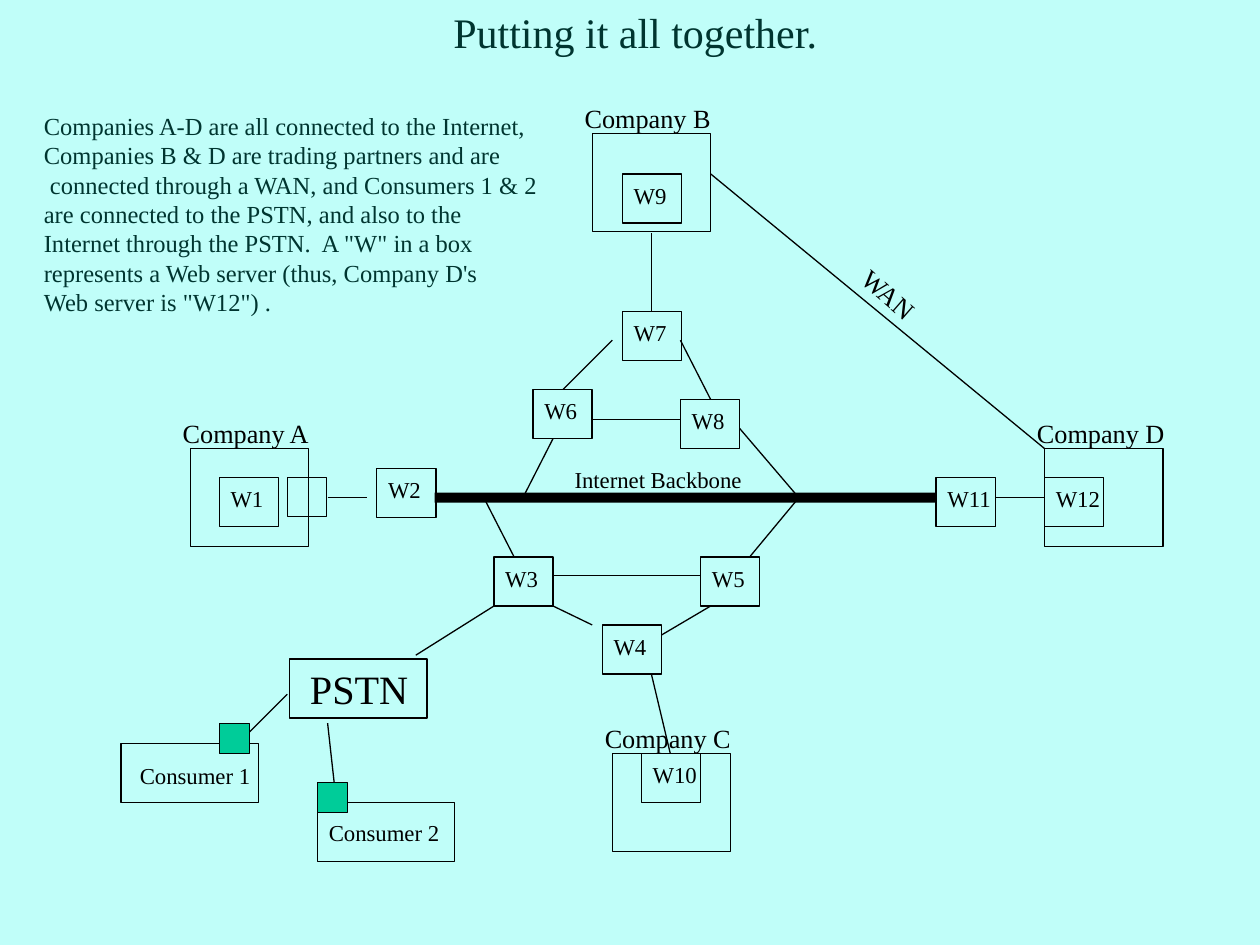
"""Network diagram linking companies, consumers, the PSTN and the Internet."""
from typing import NamedTuple, Optional

from lxml.etree import SubElement
from pptx import Presentation
from pptx.dml.color import RGBColor
from pptx.enum.shapes import MSO_CONNECTOR, MSO_SHAPE
from pptx.enum.text import MSO_AUTO_SIZE
from pptx.oxml.ns import qn
from pptx.shapes.autoshape import Shape
from pptx.slide import Slide
from pptx.util import Cm, Length, Pt

FONT = "Times New Roman"
BLACK, TEAL, GREEN, BACKGROUND = "000000", "003530", "00CC99", "C0FEF9"


class Node(NamedTuple):
    name: str
    left: float
    top: float
    label_width: float


class Link(NamedTuple):
    x1: float
    y1: float
    x2: float
    y2: float


COMPANIES = [
    Node("Company A", 1.51, 3.56, 1.09),
    Node("Company B", 4.7, 1.06, 1.07),
    Node("Company D", 8.29, 3.56, 1.09),
    Node("Company C", 4.86, 5.98, 1.07),
]
SERVERS = [
    Node("W1", 1.74, 3.79, 0.36),
    Node("W9", 4.94, 1.38, 0.36),
    Node("W12", 8.29, 3.79, 0.46),
    Node("W10", 5.09, 5.98, 0.46),
    Node("W2", 2.99, 3.72, 0.36),
    Node("W11", 7.43, 3.79, 0.46),
    Node("W6", 4.23, 3.09, 0.36),
    Node("W7", 4.94, 2.47, 0.36),
    Node("W8", 5.4, 3.17, 0.36),
    Node("W3", 3.92, 4.42, 0.36),
    Node("W4", 4.78, 4.96, 0.36),
    Node("W5", 5.56, 4.42, 0.36),
]
LINKS = [
    Link(2.6, 3.95, 2.91, 3.95),
    Link(3.84, 3.95, 4.08, 4.42),
    Link(4.39, 4.57, 5.56, 4.57),
    Link(4.39, 4.81, 4.7, 4.96),
    Link(5.25, 5.04, 5.64, 4.81),
    Link(5.95, 4.42, 6.34, 3.95),
    Link(4.39, 3.48, 4.15, 3.95),
    Link(5.87, 3.4, 6.34, 3.95),
    Link(4.7, 3.33, 5.4, 3.33),
    Link(4.47, 3.09, 4.86, 2.7),
    Link(5.4, 2.7, 5.64, 3.17),
    Link(3.3, 5.2, 3.92, 4.81),
    Link(2.6, 5.74, 2.67, 6.37),
    Link(1.97, 5.82, 2.28, 5.51),
    Link(7.9, 3.95, 8.29, 3.95),
    Link(5.17, 5.35, 5.32, 5.98),
    Link(5.17, 1.85, 5.17, 2.47),
    Link(5.64, 1.38, 8.29, 3.56),
]
EXPLANATION = """Companies A-D are all connected to the Internet,
Companies B & D are trading partners and are
 connected through a WAN, and Consumers 1 & 2
are connected to the PSTN, and also to the
Internet through the PSTN.  A "W" in a box
represents a Web server (thus, Company D's
Web server is "W12") ."""


def length(inches: float) -> Length:
    return Cm(inches * 2.54)


def colour(code: str) -> RGBColor:
    return RGBColor.from_string(code)


def add_box(page: Slide, left: float, top: float, width: float, height: float,
            fill: Optional[str] = None, outlined: bool = True) -> None:
    box = page.shapes.add_shape(MSO_SHAPE.RECTANGLE, *map(length, (left, top, width, height)))
    box.shadow.inherit = False
    if fill:
        box.fill.solid()
        box.fill.fore_color.rgb = colour(fill)
    else:
        box.fill.background()
    if outlined:
        box.line.color.rgb = colour(BLACK)
        box.line.width = Pt(0.75)
    else:
        box.line.fill.background()


def add_text(page: Slide, text: str, left: float, top: float, width: float, height: float,
             size: float, code: str = BLACK, inset: bool = False) -> Shape:
    box = page.shapes.add_textbox(*map(length, (left, top, width, height)))
    frame = box.text_frame
    frame.word_wrap = False
    frame.auto_size = MSO_AUTO_SIZE.SHAPE_TO_FIT_TEXT
    if not inset:
        frame.margin_left = frame.margin_right = frame.margin_top = frame.margin_bottom = 0
    frame.text = text
    for para in frame.paragraphs:
        para.line_spacing = Pt(size * 1.2)
        for span in para.runs:
            span.font.name = FONT
            span.font.size = Pt(size)
            span.font.color.rgb = colour(code)
    return box


def add_link(page: Slide, link: Link) -> None:
    line = page.shapes.add_connector(MSO_CONNECTOR.STRAIGHT, *map(length, link))
    line.line.color.rgb = colour(BLACK)
    line.line.width = Pt(0.75)
    SubElement(line._element.spPr, qn("a:effectLst"))


def add_company(page: Slide, node: Node) -> None:
    add_box(page, node.left, node.top, 0.94, 0.78)
    add_text(page, node.name, node.left - 0.06, node.top - 0.25, node.label_width, 0.29, 15)


def add_server(page: Slide, node: Node) -> None:
    add_box(page, node.left, node.top, 0.47, 0.39)
    add_text(page, node.name, node.left + 0.09, node.top + 0.06, node.label_width, 0.27, 13)


def main() -> None:
    deck = Presentation()
    deck.slide_width, deck.slide_height = length(10), length(7.5)
    page = deck.slides.add_slide(deck.slide_layouts[6])
    page.background.fill.solid()
    page.background.fill.fore_color.rgb = colour(BACKGROUND)

    for company in COMPANIES:
        add_company(page, company)
    for server in SERVERS:
        add_server(page, server)
    add_box(page, 2.28, 3.79, 0.31, 0.31)
    add_box(page, 3.45, 3.91, 3.98, 0.08, fill=BLACK, outlined=False)
    add_text(page, "Internet Backbone", 4.56, 3.7, 1.51, 0.27, 13)

    for left, top in ((2.3, 5.23), (2.52, 6.37), (0.96, 5.9)):
        add_box(page, left, top, 1.09, 0.47)
    add_text(page, "PSTN", 2.46, 5.27, 0.91, 0.43, 23)
    add_text(page, "Consumer 1", 1.11, 6.05, 1.02, 0.27, 13)
    add_text(page, "Consumer 2", 2.61, 6.5, 1.02, 0.27, 13)

    for link in LINKS:
        add_link(page, link)
    for left, top in ((1.74, 5.74), (2.52, 6.21)):
        add_box(page, left, top, 0.24, 0.24, fill=GREEN)
    add_text(page, "WAN", 6.79, 2.24, 0.58, 0.29, 15).rotation = 41
    add_text(page, EXPLANATION, 0.25, 0.83, 4.14, 1.73, 14, TEAL, inset=True)
    add_text(page, "Putting it all together.", 3.5, 0, 3.1, 0.5, 24, TEAL, inset=True)
    deck.save("out.pptx")


if __name__ == "__main__":
    main()
